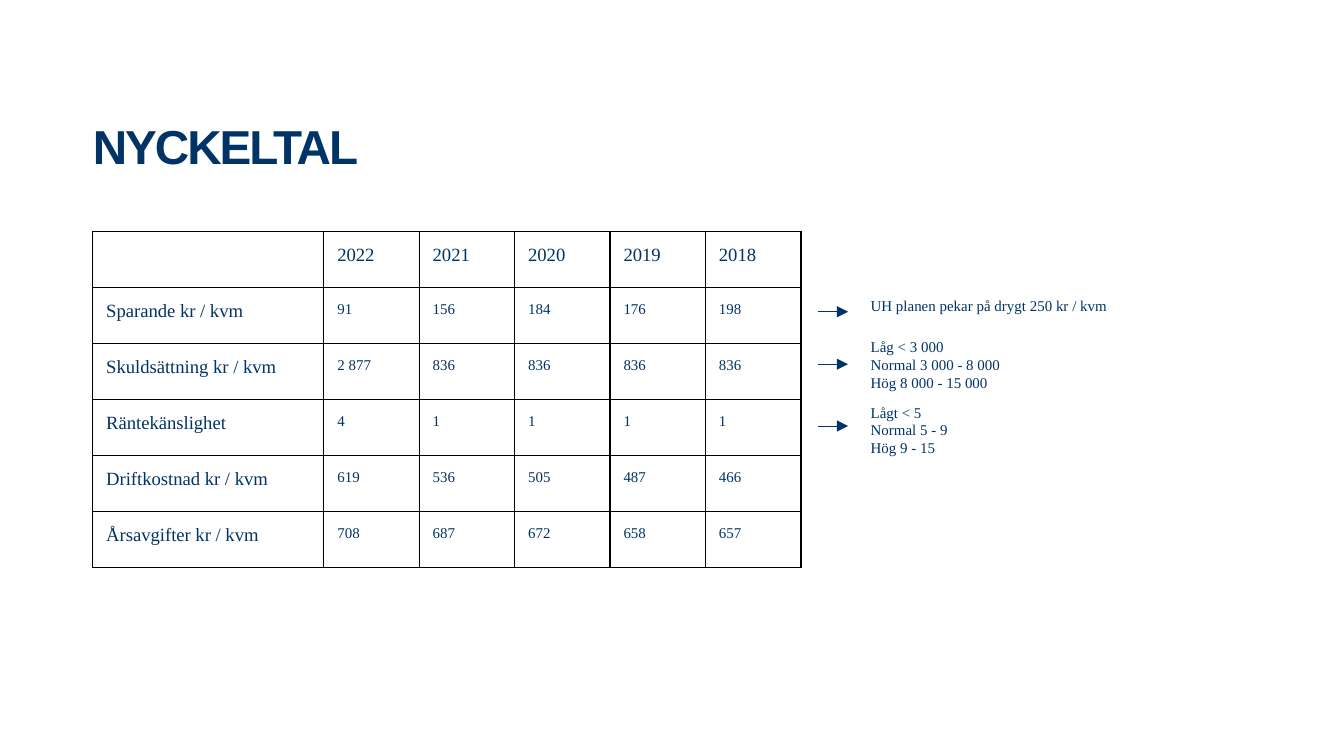
from lxml import etree
from pptx import Presentation
from pptx.dml.color import RGBColor
from pptx.enum.shapes import MSO_CONNECTOR
from pptx.enum.text import MSO_ANCHOR, MSO_AUTO_SIZE, PP_ALIGN
from pptx.oxml.ns import qn
from pptx.util import Inches, Pt

TOP = MSO_ANCHOR.TOP
LEFT = PP_ALIGN.LEFT
GROW = MSO_AUTO_SIZE.SHAPE_TO_FIT_TEXT
NO_AUTOFIT = MSO_AUTO_SIZE.NONE
STRAIGHT = MSO_CONNECTOR.STRAIGHT

NAVY = RGBColor(0x00, 0x33, 0x66)
BLACK = RGBColor(0x00, 0x00, 0x00)

SLIDE_W = Inches(10)
SLIDE_H = SLIDE_W * 9 // 16
MARGIN_X = Inches(0.69)
TABLE_TOP = Pt(124.2)
TABLE_W, TABLE_H = Inches(5.27), Inches(2.5)
NOTES_LEFT = MARGIN_X + TABLE_W
PADDING = Inches(0.1)

YEARS = ["", "2022", "2021", "2020", "2019", "2018"]
KEY_FIGURES = [
    ["Sparande kr / kvm", "91", "156", "184", "176", "198"],
    ["Skuldsättning kr / kvm", "2 877", "836", "836", "836", "836"],
    ["Räntekänslighet", "4", "1", "1", "1", "1"],
    ["Driftkostnad kr / kvm", "619", "536", "505", "487", "466"],
    ["Årsavgifter kr / kvm", "708", "687", "672", "658", "657"],
]
LABEL_COLUMN_W = Inches(1.72)

NOTES = [
    (["UH planen pekar på drygt 250 kr / kvm"], 2.14, 2.32),
    (["Låg < 3 000", "Normal 3 000 - 8 000", "Hög 8 000 - 15 000"], 2.41, 2.71),
    (["Lågt < 5", "Normal 5 - 9", "Hög 9 - 15"], 2.9, 3.17),
]


def write(frame, lines, font="Times New Roman", size=8, bold=False,
          spacing=None, tracking=None):
    for index, line in enumerate(lines):
        paragraph = frame.paragraphs[0] if index == 0 else frame.add_paragraph()
        paragraph.alignment = LEFT
        if spacing:
            paragraph.line_spacing = spacing
        run = paragraph.add_run()
        run.text = line
        run.font.name = font
        run.font.size = Pt(size)
        run.font.bold = bold
        run.font.color.rgb = NAVY
        if tracking:
            run.font._element.set("spc", str(round(tracking * 100)))


def set_insets(holder, inset):
    holder.margin_left = holder.margin_right = inset
    holder.margin_top = holder.margin_bottom = inset


def add_borders(cell, color, width):
    properties = cell._tc.get_or_add_tcPr()
    for side in ("lnL", "lnR", "lnT", "lnB"):
        border = etree.SubElement(properties, qn(f"a:{side}"), w=str(Pt(width)))
        fill = etree.SubElement(border, qn("a:solidFill"))
        etree.SubElement(fill, qn("a:srgbClr"), val=str(color))


def place_title(slide, left, top, width, height):
    title = slide.shapes.title
    title.left, title.top, title.width, title.height = left, top, width, height
    frame = title.text_frame
    set_insets(frame, 0)
    frame.vertical_anchor = TOP
    frame.auto_size = NO_AUTOFIT
    write(frame, ["NYCKELTAL"], font="Arial", size=25.5, bold=True,
          spacing=0.95, tracking=-1.1)


def place_key_figures(slide, left, top, width, height):
    rows = [YEARS] + KEY_FIGURES
    table = slide.shapes.add_table(
        len(rows), len(YEARS), left, top, width, height).table
    table.first_row = table.horz_banding = False
    year_width = (width - LABEL_COLUMN_W) // (len(YEARS) - 1)
    for index, column in enumerate(table.columns):
        column.width = year_width if index else LABEL_COLUMN_W
    for r, values in enumerate(rows):
        for c, value in enumerate(values):
            cell = table.cell(r, c)
            add_borders(cell, BLACK, 0.75)
            cell.fill.background()
            if value:
                set_insets(cell, PADDING)
                write(cell.text_frame, [value], size=8 if r and c else 10)


def add_arrow(slide, start, end, y):
    arrow = slide.shapes.add_connector(STRAIGHT, start, y, end, y)
    arrow.line.color.rgb = NAVY
    arrow.line.width = Pt(0.5)
    etree.SubElement(arrow.line._get_or_add_ln(), qn("a:tailEnd"), type="triangle")
    etree.SubElement(arrow._element.spPr, qn("a:effectLst"))


def place_note(slide, lines, left, top, width, arrow_y):
    text_left = left + Inches(0.42)
    height = PADDING * 2 + Pt(9.8) * len(lines)
    note = slide.shapes.add_textbox(text_left, top, left + width - text_left, height)
    frame = note.text_frame
    frame.word_wrap = True
    frame.auto_size = GROW
    set_insets(frame, PADDING)
    write(frame, lines)
    add_arrow(slide, left + Inches(0.13), left + Inches(0.35), arrow_y)


def main():
    deck = Presentation()
    deck.slide_width, deck.slide_height = SLIDE_W, SLIDE_H
    slide = deck.slides.add_slide(deck.slide_layouts[5])
    place_title(slide, MARGIN_X, round(SLIDE_H * 0.16),
                round(SLIDE_W * 0.74), Inches(0.83))
    place_key_figures(slide, MARGIN_X, TABLE_TOP, TABLE_W, TABLE_H)
    notes_width = SLIDE_W - MARGIN_X - NOTES_LEFT
    for lines, top, arrow_y in NOTES:
        place_note(slide, lines, NOTES_LEFT, Inches(top), notes_width, Inches(arrow_y))
    deck.save("out.pptx")


if __name__ == "__main__":
    main()
